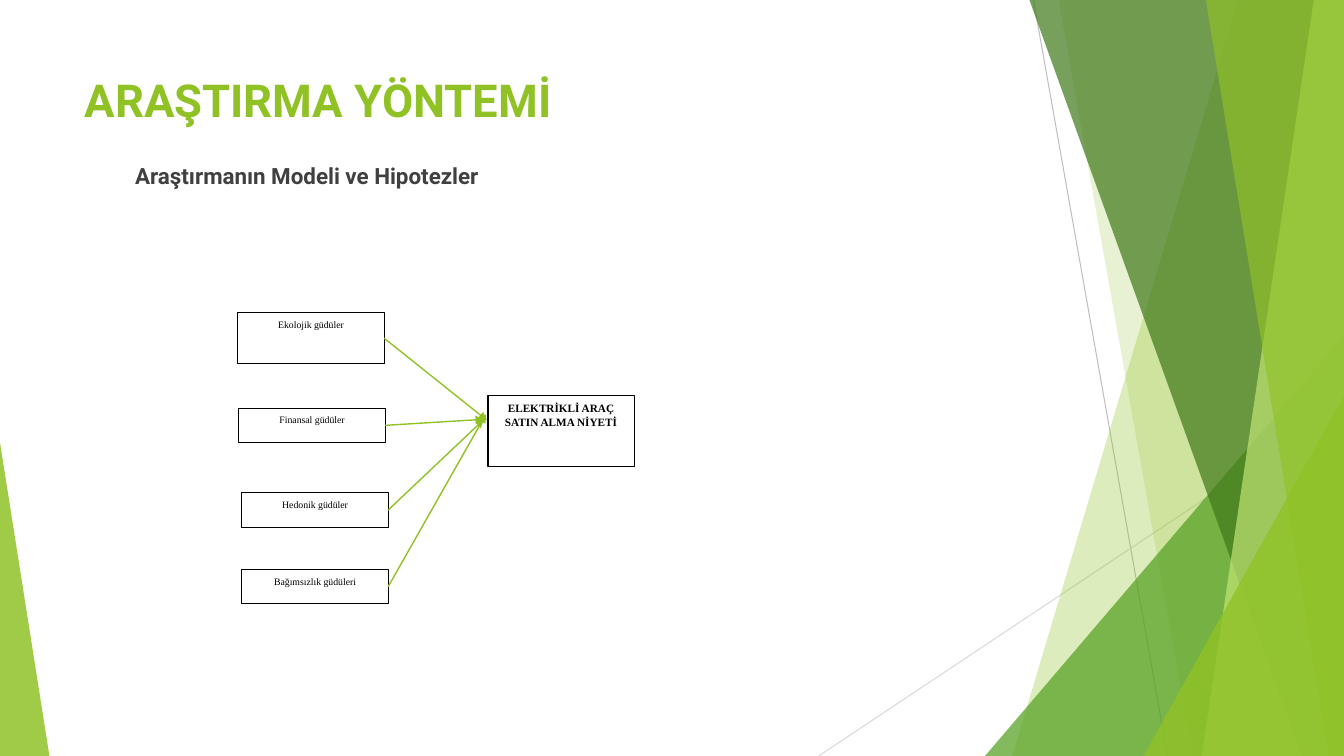
import lxml.etree
import pptx
import pptx.dml.color
import pptx.enum.shapes
import pptx.enum.text
import pptx.oxml.ns
import pptx.util

Inches = pptx.util.Inches
Pt = pptx.util.Pt
RGBColor = pptx.dml.color.RGBColor
MSO_SHAPE = pptx.enum.shapes.MSO_SHAPE
MSO_ANCHOR = pptx.enum.text.MSO_ANCHOR
PP_ALIGN = pptx.enum.text.PP_ALIGN
qn = pptx.oxml.ns.qn

LIME = RGBColor(0x90, 0xC2, 0x26)
PALE_LIME = RGBColor(0xC0, 0xE4, 0x74)
GREEN = RGBColor(0x54, 0xA0, 0x21)
DARK_GREEN = RGBColor(0x3F, 0x78, 0x19)
SILVER = RGBColor(0xBF, 0xBF, 0xBF)
LIGHT_SILVER = RGBColor(0xD9, 0xD9, 0xD9)
CHARCOAL = RGBColor(0x40, 0x40, 0x40)
BLACK = RGBColor(0, 0, 0)
WHITE = RGBColor(0xFF, 0xFF, 0xFF)

WIDTH, HEIGHT = 13.33, 7.5
HEADING_FONT = "Roboto"
MODEL_FONT = "Times New Roman"
BOX_WIDTH = 1.45

RIBBONS_BACK = [
    ([(12.28, 0), (WIDTH, 0), (WIDTH, HEIGHT), (10.04, HEIGHT)], LIME, 30),
    ([(10.5, 0), (WIDTH, 0), (WIDTH, HEIGHT), (11.83, HEIGHT)], LIME, 20),
]
RIBBONS_FRONT = [
    ([(10.21, 0), (WIDTH, 0), (WIDTH, HEIGHT), (12.91, HEIGHT)], DARK_GREEN, 70),
    ([(13.03, 0), (WIDTH, 0), (WIDTH, HEIGHT), (11.92, HEIGHT)], PALE_LIME, 70),
    ([(11.96, 0), (WIDTH, 0), (WIDTH, HEIGHT), (13.18, HEIGHT)], LIME, 65),
]
MOTIVES = [
    ("Ekolojik güdüler", (2.36, 3.1), 0.51, (4.83, 4.17)),
    ("Finansal güdüler", (2.37, 4.05), 0.34, (4.8, 4.16)),
    ("Hedonik güdüler", (2.4, 4.89), 0.34, (4.8, 4.16)),
    ("Bağımsızlık güdüleri", (2.4, 5.65), 0.34, (4.82, 4.11)),
]


def add_child(parent, tag, **attributes):
    """Append a drawing element to an XML parent."""
    return lxml.etree.SubElement(parent, qn(tag), attributes)


def tint(sp, color, opacity):
    """Fill a shape with a translucent colour and no outline."""
    sp.shadow.inherit = False
    sp.fill.solid()
    sp.fill.fore_color.rgb = color
    sp.line.fill.background()
    clr = sp._element.spPr.find(qn("a:solidFill"))[0]
    add_child(clr, "a:alpha", val=str(opacity * 1000))


def add_ribbon(slide, points, color, opacity):
    """Draw a translucent polygon."""
    corners = [(Inches(x), Inches(y)) for x, y in points]
    builder = slide.shapes.build_freeform(*corners[0])
    builder.add_line_segments(corners[1:], close=True)
    tint(builder.convert_to_shape(), color, opacity)


def add_triangle(slide, left, top, width, apex, color, opacity):
    """Draw a translucent triangle standing on the bottom edge."""
    sp = slide.shapes.add_shape(
        MSO_SHAPE.ISOSCELES_TRIANGLE, Inches(left), Inches(top),
        Inches(width), Inches(HEIGHT - top))
    sp.adjustments[0] = apex
    tint(sp, color, opacity)


def add_line(slide, start, end, color, width):
    """Draw a straight line without shadow."""
    line = slide.shapes.add_connector(
        pptx.enum.shapes.MSO_CONNECTOR.STRAIGHT,
        *[Inches(v) for v in (*start, *end)])
    line.line.color.rgb = color
    line.line.width = Pt(width)
    add_child(line._element.spPr, "a:effectLst")
    return line


def add_arrow(slide, box, end):
    """Draw an arrow from the right side of a box."""
    start = ((box.left + box.width) / Inches(1),
             (box.top + box.height / 2) / Inches(1))
    line = add_line(slide, start, end, LIME, 1)
    line.begin_connect(box, 3)
    add_child(line._element.spPr.find(qn("a:ln")), "a:tailEnd", type="triangle")


def add_run(p, text, font, size, color, bold):
    """Add one formatted run."""
    r = p.add_run()
    r.text = text
    r.font.name = font
    r.font.size = Pt(size)
    r.font.color.rgb = color
    r.font.bold = bold


def add_box(slide, text, position, height, size=7, bold=False):
    """Draw a bordered model box with centred text at its top."""
    sp = slide.shapes.add_shape(
        MSO_SHAPE.RECTANGLE, *[Inches(v) for v in (*position, BOX_WIDTH, height)])
    sp.shadow.inherit = False
    sp.fill.solid()
    sp.fill.fore_color.rgb = WHITE
    sp.line.color.rgb = BLACK
    sp.line.width = Pt(0.75)
    tf = sp.text_frame
    tf.word_wrap = True
    tf.vertical_anchor = MSO_ANCHOR.TOP
    p = tf.paragraphs[0]
    p.alignment = PP_ALIGN.CENTER
    p.line_spacing = 1.07
    p.space_after = Pt(8)
    add_run(p, text, MODEL_FONT, size, BLACK, bold)
    return sp


def fill_placeholder(slide, sp, top, height, text, size, color):
    """Place a placeholder in front and write its heading."""
    slide.shapes._spTree.append(sp._element)
    sp.left, sp.top = Inches(0.74), Inches(top)
    sp.width, sp.height = Inches(9.4), Inches(height)
    tf = sp.text_frame
    tf.word_wrap = True
    tf.auto_size = pptx.enum.text.MSO_AUTO_SIZE.NONE
    tf.vertical_anchor = MSO_ANCHOR.TOP
    p = tf.paragraphs[0]
    p.alignment = PP_ALIGN.LEFT
    add_run(p, text, HEADING_FONT, size, color, True)
    return p


def add_backdrop(slide):
    """Draw the green facets and thin lines around the slide."""
    add_line(slide, (10.25, 0), (11.58, HEIGHT), SILVER, 0.75)
    add_line(slide, (WIDTH, 4.03), (8.12, HEIGHT), LIGHT_SILVER, 0.75)
    for ribbon in RIBBONS_BACK:
        add_ribbon(slide, *ribbon)
    add_triangle(slide, 9.77, 3.33, 3.56, 1, GREEN, 72)
    for ribbon in RIBBONS_FRONT:
        add_ribbon(slide, *ribbon)
    add_triangle(slide, 11.34, 3.93, 1.99, 1, LIME, 80)
    add_triangle(slide, 0, 4.39, 0.49, 0, LIME, 85)


def add_headings(slide):
    """Write the title and the unbulleted second-level heading."""
    fill_placeholder(slide, slide.shapes.title, 0.67, 0.89,
                     "ARAŞTIRMA YÖNTEMİ", 32.4, LIME)
    p = fill_placeholder(slide, slide.placeholders[1], 1.56, 5.05,
                         "Araştırmanın Modeli ve Hipotezler", 16, CHARCOAL)
    p.level = 1
    p.space_before = Pt(10)
    pPr = p._p.get_or_add_pPr()
    pPr.set("marL", str(Inches(0.5)))
    pPr.set("indent", "0")
    add_child(pPr, "a:buNone")


def add_model(slide):
    """Draw the motives, the purchase intention and their arrows."""
    boxes = [add_box(slide, text, position, height)
             for text, position, height, _ in MOTIVES]
    add_box(slide, "ELEKTRİKLİ ARAÇ SATIN ALMA NİYETİ", (4.84, 3.92), 0.71, 8, True)
    for box, (*_, end) in zip(boxes, MOTIVES):
        add_arrow(slide, box, end)


def main():
    """Build and save the slide."""
    prs = pptx.Presentation()
    prs.slide_width, prs.slide_height = Inches(WIDTH), Inches(HEIGHT)
    slide = prs.slides.add_slide(prs.slide_layouts[1])
    add_backdrop(slide)
    add_headings(slide)
    add_model(slide)
    prs.save("out.pptx")


if __name__ == "__main__":
    main()
